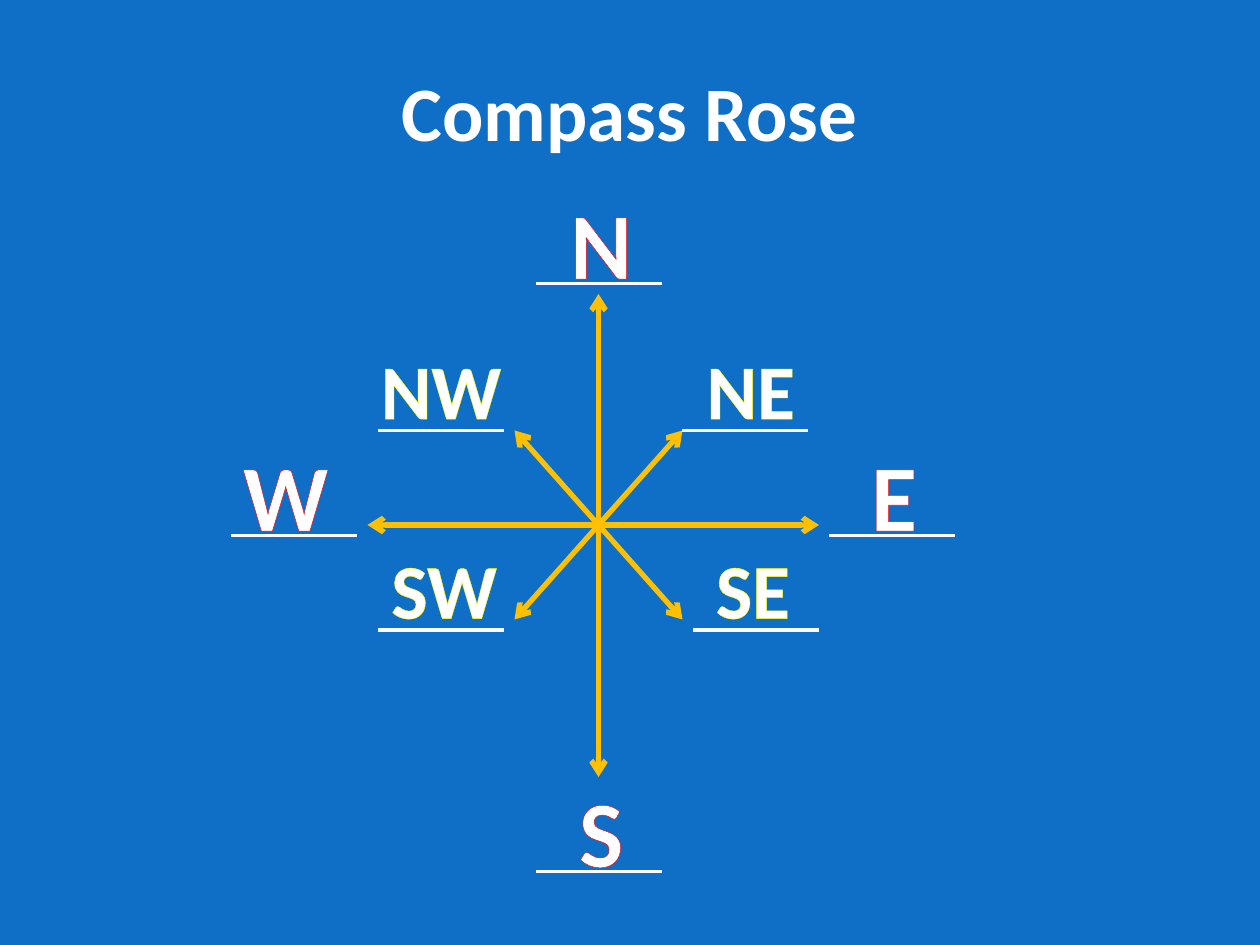
from lxml.etree import SubElement
from pptx import Presentation
from pptx.dml.color import RGBColor
from pptx.enum.shapes import MSO_CONNECTOR
from pptx.enum.text import MSO_ANCHOR, MSO_AUTO_SIZE, PP_ALIGN
from pptx.oxml import parse_xml
from pptx.oxml.ns import nsdecls, qn
from pptx.util import Inches, Pt

BLUE = RGBColor(0x0F, 0x6F, 0xC6)
WHITE = RGBColor(0xFF, 0xFF, 0xFF)
GOLD = RGBColor(0xFF, 0xC0, 0x00)
RED = RGBColor(0xFF, 0x00, 0x00)
YELLOW = RGBColor(0xFF, 0xFF, 0x00)

TITLE = "Compass Rose"
GRID = 12
RULE_WIDTH = 12

ARROWS = [
    ((57, 28), (57, 74)),
    ((35, 50), (78, 50)),
    ((49, 41), (65, 59)),
    ((65, 41), (49, 59)),
]

CARDINAL = dict(size=54, outline=RED, rise=10, height=1.01)
DIAGONAL = dict(size=44, outline=YELLOW, rise=9, height=0.84)

POINTS = [
    ("N", CARDINAL, (51, 27), 57.25, 0.70),
    ("E", CARDINAL, (79, 51), 85.15, 0.57),
    ("S", CARDINAL, (51, 83), 57.25, 0.56),
    ("W", CARDINAL, (22, 51), 27.2, 0.89),
    ("NW", DIAGONAL, (36, 41), 42, 1.17),
    ("SE", DIAGONAL, (66, 60), 71.7, 0.79),
    ("NE", DIAGONAL, (65, 41), 71.5, 0.91),
    ("SW", DIAGONAL, (36, 60), 42.3, 1.05),
]


def cells(count):
    return Inches(count / GRID)


def write(frame, text, size, outline=None):
    para = frame.paragraphs[0]
    para.alignment = PP_ALIGN.CENTER
    span = para.add_run()
    span.text = text
    span.font.name = "Calibri"
    span.font.size = Pt(size)
    span.font.bold = True
    span.font.color.rgb = WHITE
    if outline is not None:
        border = parse_xml(
            f'<a:ln {nsdecls("a")} w="{Pt(2.48)}"><a:solidFill>'
            f'<a:srgbClr val="{outline}"/></a:solidFill></a:ln>'
        )
        span.font._element.insert(0, border)


def draw_line(page, start, end, color, width, arrows=False):
    line = page.shapes.add_connector(
        MSO_CONNECTOR.STRAIGHT, *map(cells, (*start, *end))
    )
    line.line.color.rgb = color
    line.line.width = Pt(width)
    if arrows:
        border = line.line._get_or_add_ln()
        for tag in ("a:headEnd", "a:tailEnd"):
            SubElement(border, qn(tag), type="arrow")
    SubElement(line._element.spPr, qn("a:effectLst"))


def add_label(page, text, style, rule, center, width):
    box = page.shapes.add_textbox(
        cells(center) - Inches(width) // 2,
        cells(rule[1] - style["rise"]),
        Inches(width),
        Inches(style["height"]),
    )
    box.text_frame.word_wrap = False
    box.text_frame.auto_size = MSO_AUTO_SIZE.SHAPE_TO_FIT_TEXT
    write(box.text_frame, text, size=style["size"], outline=style["outline"])


def main():
    deck = Presentation()
    deck.slide_width, deck.slide_height = Inches(10), Inches(7.5)
    page = deck.slides.add_slide(deck.slide_layouts[5])
    page.background.fill.solid()
    page.background.fill.fore_color.rgb = BLUE

    title = page.shapes.title
    title.left, title.top = cells(6), cells(3)
    title.width, title.height = cells(108), cells(15)
    title.text_frame.vertical_anchor = MSO_ANCHOR.MIDDLE
    write(title.text_frame, TITLE, size=44)

    for start, end in ARROWS:
        draw_line(page, start, end, GOLD, 3, arrows=True)
    for text, style, rule, center, width in POINTS:
        draw_line(page, rule, (rule[0] + RULE_WIDTH, rule[1]), WHITE, 2.25)
        add_label(page, text, style, rule, center, width)

    deck.save("out.pptx")


if __name__ == "__main__":
    main()
